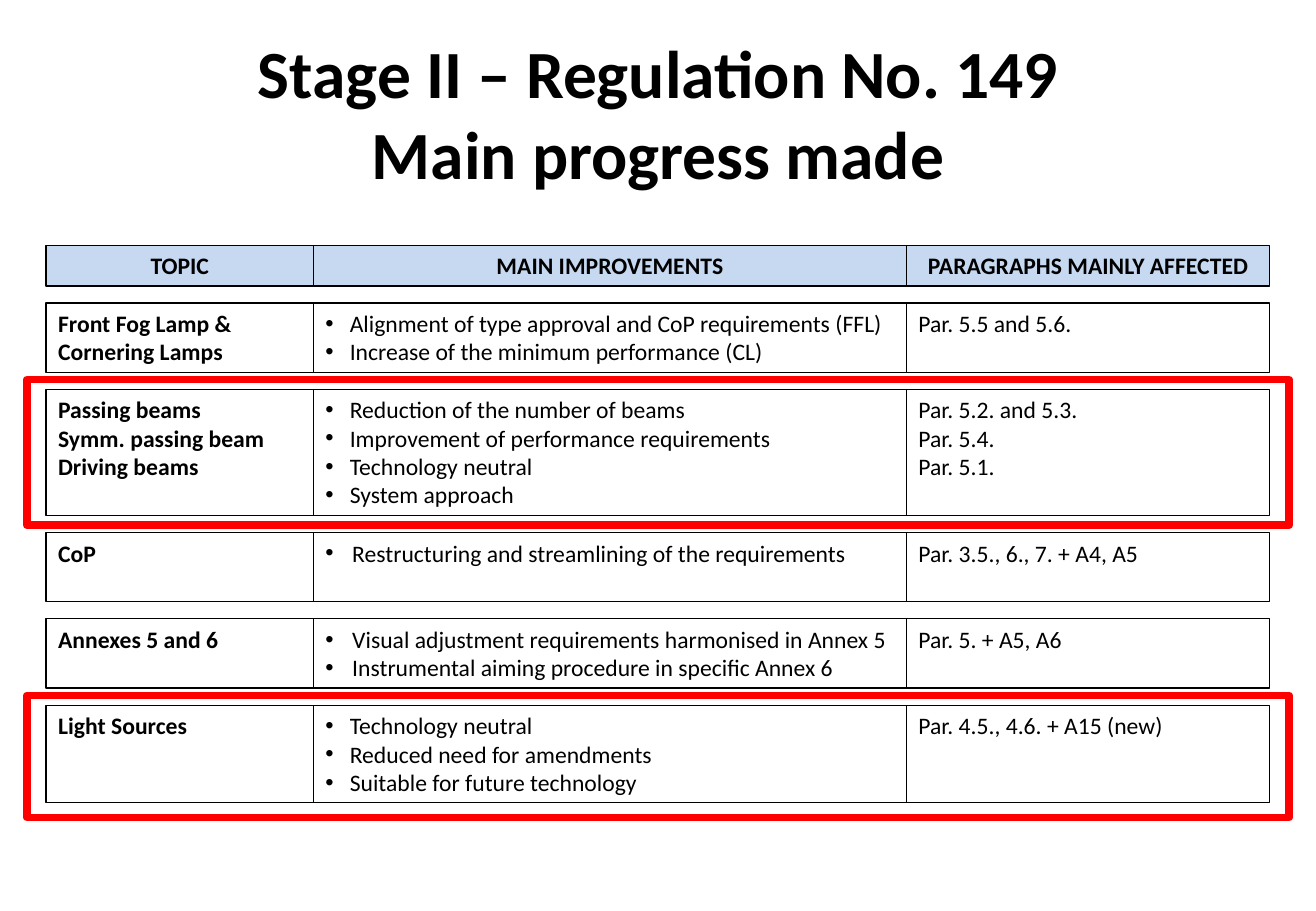
from itertools import accumulate

from lxml.etree import SubElement
from pptx import Presentation
from pptx.dml.color import RGBColor
from pptx.enum.shapes import MSO_SHAPE
from pptx.enum.text import MSO_ANCHOR, PP_ALIGN
from pptx.oxml.ns import qn
from pptx.util import Inches, Pt

COLUMN_WIDTHS = (2.2, 4.88, 2.99)
TABLE_LEFT, TABLE_TOP = 0.38, 2.02
LINE_HEIGHT, ROW_PADDING, ROW_GAP = 0.235, 0.1, 0.14
FRAME_SIDE, FRAME_ABOVE = 0.16, 0.08

HEADINGS = ("TOPIC", "MAIN IMPROVEMENTS", "PARAGRAPHS MAINLY AFFECTED")
# Topics, improvements, paragraphs affected, lines of height,
# bullet indent, space from the row to the bottom of its frame
TOPIC_ROWS = [
    (["Front Fog Lamp &", "Cornering Lamps"],
     ["Alignment of type approval and CoP requirements (FFL)",
      "Increase of the minimum performance (CL)"],
     ["Par. 5.5 and 5.6."], 2, 0.2, None),
    (["Passing beams", "Symm. passing beam", "Driving beams"],
     ["Reduction of the number of beams", "Improvement of performance requirements",
      "Technology neutral", "System approach"],
     ["Par. 5.2. and 5.3.", "Par. 5.4.", "Par. 5.1."], 4, 0.2, 0.08),
    (["CoP"], ["Restructuring and streamlining of the requirements"],
     ["Par. 3.5., 6., 7. + A4, A5"], 2, 0.22, None),
    (["Annexes 5 and 6"],
     ["Visual adjustment requirements harmonised in Annex 5",
      "Instrumental aiming procedure in specific Annex 6"],
     ["Par. 5. + A5, A6"], 2, 0.22, None),
    (["Light Sources"],
     ["Technology neutral", "Reduced need for amendments", "Suitable for future technology"],
     ["Par. 4.5., 4.6. + A15 (new)"], 3, 0.2, 0.12),
]


def color(value):
    return RGBColor.from_string(value)


def write_text(shape, lines, size=14, bold=False, align=PP_ALIGN.LEFT, indent=None):
    """Fill a shape with one paragraph per line, bulleted if an indent is given."""
    frame = shape.text_frame
    frame.word_wrap = True
    frame.vertical_anchor = MSO_ANCHOR.TOP
    for index, line in enumerate(lines):
        paragraph = frame.add_paragraph() if index else frame.paragraphs[0]
        paragraph.alignment = align
        run = paragraph.add_run()
        run.text = line
        run.font.name = "Calibri"
        run.font.size = Pt(size)
        run.font.bold = bold
        run.font.color.rgb = color("000000")
        if indent:
            properties = paragraph._p.get_or_add_pPr()
            properties.set("marL", str(Inches(indent)))
            properties.set("indent", str(-Inches(indent)))
            SubElement(properties, qn("a:buFont"), typeface="Arial")
            SubElement(properties, qn("a:buChar"), char="•")


def add_rectangle(shapes, box, line="000000", width=0.75, fill=None):
    shape = shapes.add_shape(MSO_SHAPE.RECTANGLE, *map(Inches, box))
    shape.shadow.inherit = False
    shape.line.color.rgb = color(line)
    shape.line.width = Pt(width)
    if fill:
        shape.fill.solid()
        shape.fill.fore_color.rgb = color(fill)
    else:
        shape.fill.background()
    return shape


def add_title(slide, box):
    title = slide.shapes.add_textbox(*map(Inches, box))
    write_text(title, ["Stage II – Regulation No. 149", "Main progress made"],
               size=40, bold=True, align=PP_ALIGN.CENTER)


def add_row(slide, top, height, cells, fill=None):
    """Group one row of boxes; each cell is its lines and their format."""
    group = slide.shapes.add_group_shape()
    lefts = accumulate(COLUMN_WIDTHS, initial=TABLE_LEFT)
    for left, width, (lines, text_format) in zip(lefts, COLUMN_WIDTHS, cells):
        shape = add_rectangle(group.shapes, (left, top, width, height), fill=fill)
        write_text(shape, lines, **text_format)


def add_topic_rows(slide, top):
    """Stack the heading and topic rows, then frame the highlighted ones."""
    heading_format = {"bold": True, "align": PP_ALIGN.CENTER}
    height = LINE_HEIGHT + ROW_PADDING
    add_row(slide, top, height, [([text], heading_format) for text in HEADINGS], fill="C6D9F1")
    frames = []
    for topics, improvements, affected, line_count, indent, frame_below in TOPIC_ROWS:
        top += height + ROW_GAP
        height = line_count * LINE_HEIGHT + ROW_PADDING
        add_row(slide, top, height, [
            (topics, {"bold": True}), (improvements, {"indent": indent}), (affected, {})])
        if frame_below:
            frames.append((TABLE_LEFT - FRAME_SIDE, top - FRAME_ABOVE,
                           sum(COLUMN_WIDTHS) + 2 * FRAME_SIDE,
                           height + FRAME_ABOVE + frame_below))
    for box in frames:
        add_rectangle(slide.shapes, box, line="FF0000", width=4.5)


def main():
    presentation = Presentation()
    presentation.slide_width = Inches(10.83)
    presentation.slide_height = Inches(7.5)
    slide = presentation.slides.add_slide(presentation.slide_layouts[6])
    add_title(slide, (0.54, 0.21, 9.75, 1.45))
    add_topic_rows(slide, TABLE_TOP)
    presentation.save("out.pptx")


if __name__ == "__main__":
    main()
